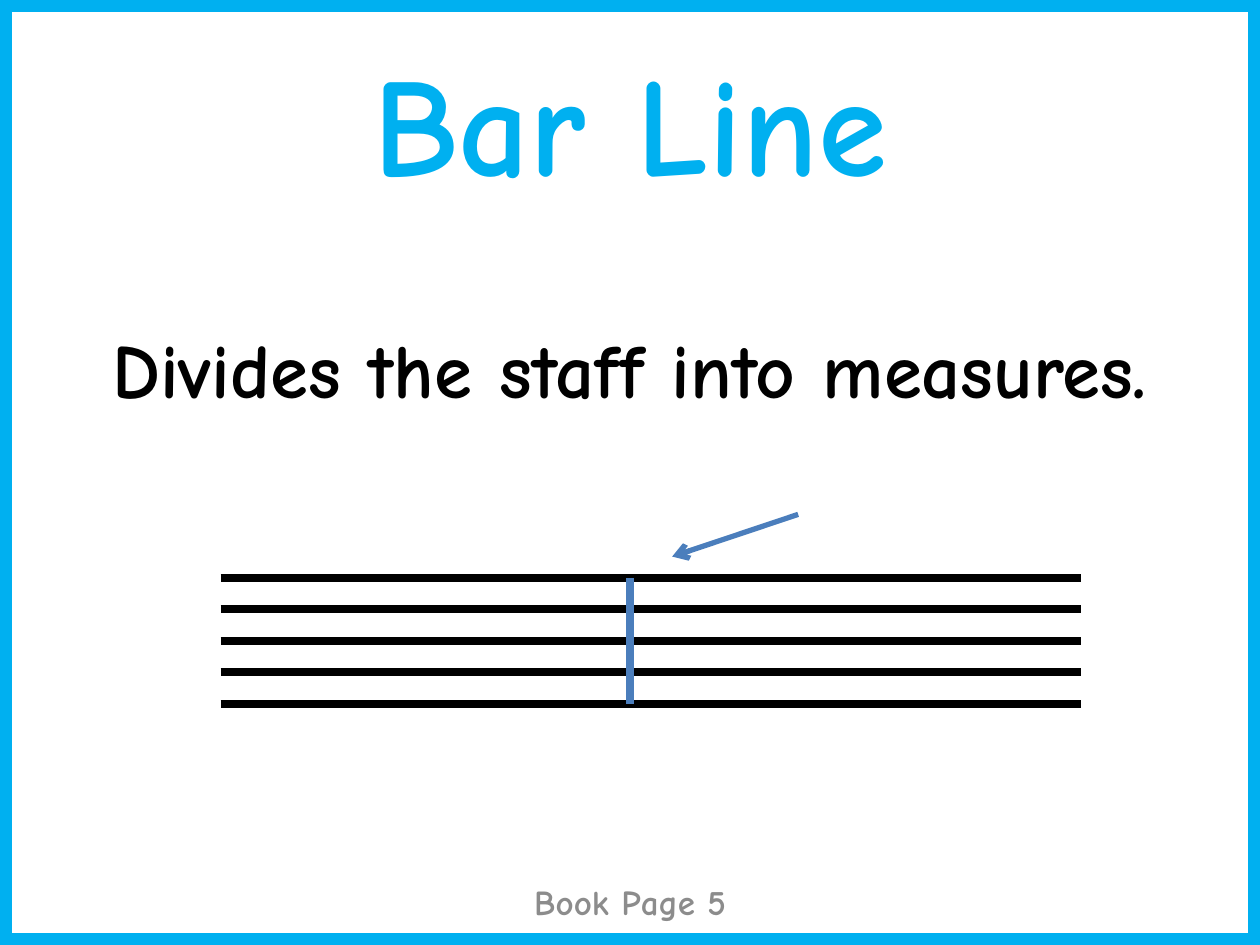
from lxml import etree
from pptx import Presentation
from pptx.dml.color import RGBColor
from pptx.enum.shapes import MSO_CONNECTOR, MSO_SHAPE
from pptx.enum.text import MSO_ANCHOR, PP_ALIGN
from pptx.oxml.ns import qn
from pptx.util import Cm, Pt

LINE, RECT = MSO_CONNECTOR.STRAIGHT, MSO_SHAPE.RECTANGLE
TOP, MID, CENTER = MSO_ANCHOR.TOP, MSO_ANCHOR.MIDDLE, PP_ALIGN.CENTER
SKY = RGBColor(0x00, 0xB0, 0xF0)
BLUE = RGBColor(0x4B, 0x7E, 0xBC)
GREY = RGBColor(0x8C, 0x8C, 0x8C)
BLACK = RGBColor(0, 0, 0)
FONT = "Comic Neue"
WIDE, HIGH = 25.4, 19.05

# Content: text, box (left, top, width, height), size, colour, anchor, space before
TITLE = ("Bar Line", (0.64, 0.85, 24.13, 3.18), 80, SKY, MID, 0)
BODY = ("Divides the staff into measures.", (1.9, 6.35, 21.6, 4.01), 44, BLACK, TOP, 8.8)
FOOT = ("Book Page 5", (8.68, 17.66, 8.05, 1.02), 20, GREY, MID, 0)

# Staff: five lines, evenly spaced
LEFT, RIGHT, FIRST, GAP, COUNT = 4.45, 21.8, 11.65, 0.635, 5
LAST = FIRST + GAP * (COUNT - 1)
BAR = WIDE / 2


def add_text(slide, text, box, size, color, anchor, before):
    frame = slide.shapes.add_textbox(*map(Cm, box)).text_frame
    frame.word_wrap = True
    frame.vertical_anchor = anchor
    para = frame.paragraphs[0]
    para.text = text
    para.alignment = CENTER
    para.space_before = Pt(before)
    font = para.font
    font.name, font.size, font.bold = FONT, Pt(size), True
    font.color.rgb = color


def add_line(slide, start, end, color, width):
    line = slide.shapes.add_connector(LINE, *map(Cm, start + end))
    line.line.color.rgb = color
    line.line.width = Pt(width)
    etree.SubElement(line._element.spPr, qn("a:effectLst"))
    return line


def main():
    deck = Presentation()
    deck.slide_width, deck.slide_height = Cm(WIDE), Cm(HIGH)
    slide = deck.slides.add_slide(deck.slide_layouts[6])

    add_text(slide, *TITLE)

    # Page border
    border = slide.shapes.add_shape(RECT, 0, 0, Cm(WIDE), Cm(HIGH))
    border.shadow.inherit = False
    border.fill.background()
    border.line.color.rgb = SKY
    border.line.width = Pt(14)

    add_text(slide, *FOOT)
    add_text(slide, *BODY)

    # Staff and bar line
    for row in range(COUNT):
        y = FIRST + GAP * row
        add_line(slide, (LEFT, y), (RIGHT, y), BLACK, 4.5)
    add_line(slide, (BAR, FIRST), (BAR, LAST), BLUE, 4.5)

    # Arrow pointing at the bar line
    arrow = add_line(slide, (16.09, 10.37), (13.55, 11.22), BLUE, 3)
    etree.SubElement(arrow.line._get_or_add_ln(), qn("a:tailEnd"), type="arrow")

    deck.save("out.pptx")


if __name__ == "__main__":
    main()
